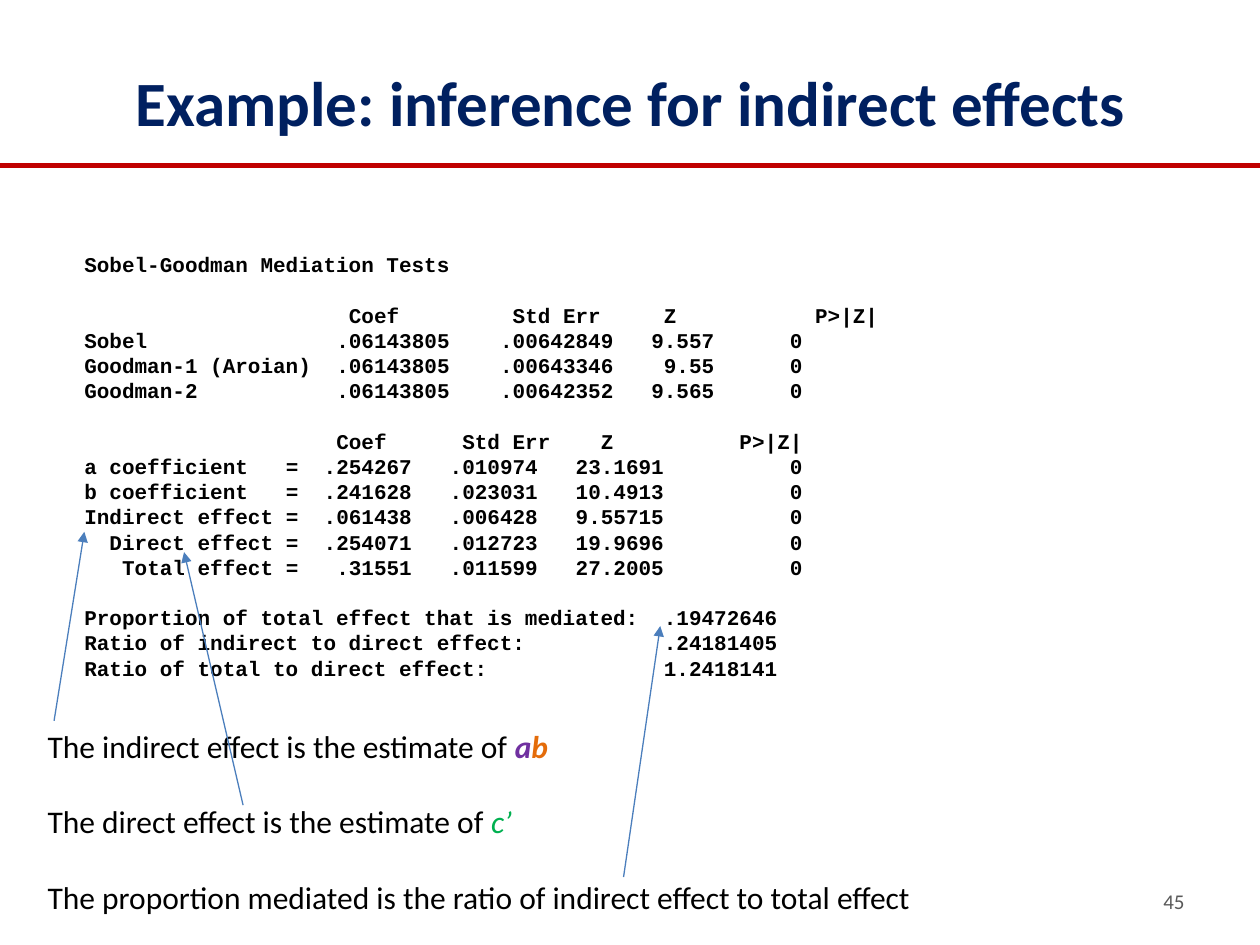
"""Build a slide on inference for indirect effects."""
from typing import NamedTuple

from lxml.etree import SubElement
from pptx import Presentation
from pptx.dml.color import RGBColor
from pptx.enum.shapes import MSO_CONNECTOR as Conn
from pptx.enum.text import MSO_ANCHOR as Anchor, PP_ALIGN as Align
from pptx.oxml.ns import qn
from pptx.util import Cm, Pt

NAVY = RGBColor(0x00, 0x20, 0x60)
RED = RGBColor(0xC0, 0x00, 0x00)
BLUE = RGBColor(0x4B, 0x7E, 0xBC)
BLACK = RGBColor(0x00, 0x00, 0x00)
GREY = RGBColor(0x59, 0x59, 0x59)
PURPLE = RGBColor(0x70, 0x30, 0xA0)
ORANGE = RGBColor(0xE4, 0x6C, 0x0A)
GREEN = RGBColor(0x00, 0xB0, 0x50)

SANS, MONO = "Calibri", "Courier New"
CHAR = Cm(0.254)
PITCH = 14.4


class Box(NamedTuple):
    left: float
    top: float
    width: float
    height: float


class Line(NamedTuple):
    start: tuple[float, float]
    end: tuple[float, float]
    color: RGBColor = BLUE
    width: float = 0.75
    arrow: bool = True


class Row(NamedTuple):
    cells: tuple[str, ...]
    stops: tuple[int, ...] = ()
    gap: bool = False


class Mark(NamedTuple):
    text: str
    color: RGBColor
    bold: bool = False


class Note(NamedTuple):
    text: str
    marks: tuple[Mark, ...] = ()


TESTS = (29, 42, 50, 57)
COEFS = (17, 26, 36, 46, 57)
EFFECTS = (15, *COEFS)
RATIO = (55,)
HEADS = ("", "Coef", "Std Err", "Z", "P>|Z|")

ROWS = [
    Row(("Sobel-Goodman Mediation Tests",)),
    Row(HEADS, (25, 41, 47, 63), True),
    Row(("Sobel", ".06143805", ".00642849", "9.557", "0"), TESTS),
    Row(("Goodman-1 (Aroian)", ".06143805", ".00643346", "9.55", "0"), TESTS),
    Row(("Goodman-2", ".06143805", ".00642352", "9.565", "0"), TESTS),
    Row(HEADS, (24, 37, 42, 57), True),
    Row(("a coefficient", "=", ".254267", ".010974", "23.1691", "0"), COEFS),
    Row(("b coefficient", "=", ".241628", ".023031", "10.4913", "0"), COEFS),
    Row(("Indirect effect", "=", ".061438", ".006428", "9.55715", "0"), COEFS),
    Row(("", "Direct effect", "=", ".254071", ".012723", "19.9696", "0"), EFFECTS),
    Row(("", "Total effect", "=", ".31551", ".011599", "27.2005", "0"), EFFECTS),
    Row(("Proportion of total effect that is mediated:", ".19472646"), RATIO, True),
    Row(("Ratio of indirect to direct effect:", ".24181405"), RATIO),
    Row(("Ratio of total to direct effect:", "1.2418141"), RATIO),
]

NOTES = [
    Note("The indirect effect is the estimate of ",
         (Mark("a", PURPLE, True), Mark("b", ORANGE, True))),
    Note("The direct effect is the estimate of ", (Mark("c’", GREEN),)),
    Note("The proportion mediated is the ratio of indirect effect to total effect"),
]

LINES = [
    Line((0, 3.33), (25.4, 3.33), RED, 3, False),
    Line((1.09, 14.53), (1.7, 10.72)),
    Line((4.9, 16.23), (3.71, 11.13)),
    Line((12.57, 17.68), (13.31, 12.62)),
]


def add_frame(slide, box: Box, anchor=Anchor.TOP):
    frame = slide.shapes.add_textbox(*map(Cm, box)).text_frame
    frame.word_wrap = True
    frame.vertical_anchor = anchor
    return frame


def next_para(frame, index: int):
    return frame.add_paragraph() if index else frame.paragraphs[0]


def set_font(font, name: str, size: float, color: RGBColor, bold: bool = False) -> None:
    font.name, font.size, font.bold = name, Pt(size), bold
    font.color.rgb = color


def add_label(slide, box: Box, text: str, align, size: float, color: RGBColor,
              bold: bool = False) -> None:
    para = add_frame(slide, box, Anchor.MIDDLE).paragraphs[0]
    para.text, para.alignment = text, align
    set_font(para.font, SANS, size, color, bold)


def set_tabs(para, stops: tuple[int, ...]) -> None:
    tabs = SubElement(para._p.get_or_add_pPr(), qn("a:tabLst"))
    for stop in stops:
        SubElement(tabs, qn("a:tab"), pos=str(stop * CHAR), algn="r")


def add_rows(slide, box: Box, rows: list[Row]) -> None:
    frame = add_frame(slide, box)
    frame.margin_top = Cm(1.14)
    for index, row in enumerate(rows):
        para = next_para(frame, index)
        para.text = "\t".join(row.cells)
        para.line_spacing = Pt(PITCH)
        para.space_before = Pt(PITCH if row.gap else 0)
        if row.stops:
            set_tabs(para, row.stops)
        set_font(para.font, MONO, 12, BLACK, True)


def add_notes(slide, box: Box, notes: list[Note]) -> None:
    frame = add_frame(slide, box)
    for index, note in enumerate(notes):
        para = next_para(frame, index)
        para.text = note.text
        para.space_before = Pt(21.5 if index else 0)
        set_font(para.font, SANS, 18, BLACK)
        for mark in note.marks:
            run = para.add_run()
            run.text = mark.text
            run.font.color.rgb = mark.color
            run.font.bold, run.font.italic = mark.bold, True


def add_line(slide, line: Line) -> None:
    ends = map(Cm, (*line.start, *line.end))
    conn = slide.shapes.add_connector(Conn.STRAIGHT, *ends)
    conn.line.color.rgb = line.color
    conn.line.width = Pt(line.width)
    props = conn._element.spPr
    if line.arrow:
        SubElement(props.find(qn("a:ln")), qn("a:tailEnd"), type="triangle")
    SubElement(props, qn("a:effectLst"))


def main() -> None:
    deck = Presentation()
    deck.slide_width, deck.slide_height = Cm(25.4), Cm(19.05)
    slide = deck.slides.add_slide(deck.slide_layouts[6])
    add_label(slide, Box(0.71, 0.76, 24, 2.57),
              "Example: inference for indirect effects", Align.CENTER, 36, NAVY, True)
    add_rows(slide, Box(1.45, 3.94, 22.86, 10.21), ROWS)
    add_label(slide, Box(18.21, 17.65, 5.92, 1.02), "45", Align.RIGHT, 12, GREY)
    add_notes(slide, Box(0.71, 14.53, 18.8, 4.11), NOTES)
    for line in LINES:
        add_line(slide, line)
    deck.save("out.pptx")


if __name__ == "__main__":
    main()
